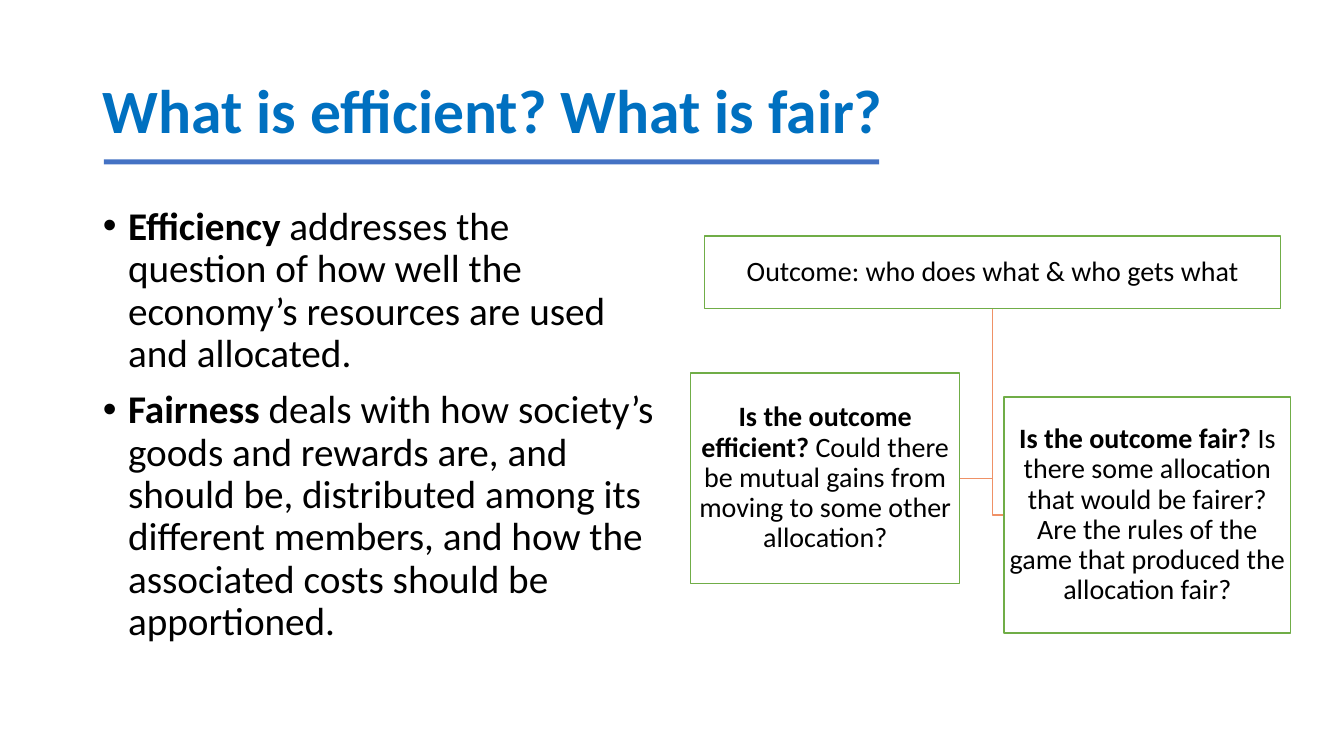
import pptx
import pptx.dml.color
import pptx.enum.shapes
import pptx.enum.text
import pptx.oxml
import pptx.oxml.ns
import pptx.util

Inches = pptx.util.Inches
RGBColor = pptx.dml.color.RGBColor
Align = pptx.enum.text.PP_ALIGN
Anchor = pptx.enum.text.MSO_ANCHOR

TITLE_BLUE = RGBColor(0x00, 0x70, 0xC0)
RULE_BLUE = RGBColor(0x44, 0x72, 0xC4)
BOX_GREEN = RGBColor(0x70, 0xAD, 0x47)
BRANCH_ORANGE = RGBColor(0xEF, 0x91, 0x66)
BLACK = RGBColor(0x00, 0x00, 0x00)
WHITE = RGBColor(0xFF, 0xFF, 0xFF)

DEFINITIONS = [
    ("Efficiency", " addresses the question of how well the economy’s resources "
                   "are used and allocated."),
    ("Fairness", " deals with how society’s goods and rewards are, and should be, "
                 "distributed among its different members, and how the associated "
                 "costs should be apportioned."),
]
OUTCOME = ("", "Outcome: who does what & who gets what")
EFFICIENT = ("Is the outcome efficient? ",
             "Could there be mutual gains from moving to some other allocation?")
FAIR = ("Is the outcome fair? ",
        "Is there some allocation that would be fairer? Are the rules of the game "
        "that produced the allocation fair?")


def write_text(shape, paragraphs, *, size, color=BLACK, align=Align.LEFT,
               anchor=Anchor.TOP, inset=None, space_before=0, bullet=False):
    """Fill a shape with paragraphs, each given as (bold lead, plain rest)."""
    frame = shape.text_frame
    frame.word_wrap = True
    frame.auto_size = pptx.enum.text.MSO_AUTO_SIZE.NONE
    frame.vertical_anchor = anchor
    if inset is not None:
        frame.margin_left = frame.margin_right = Inches(inset)
        frame.margin_top = frame.margin_bottom = Inches(inset)
    for index, parts in enumerate(paragraphs):
        paragraph = frame.add_paragraph() if index else frame.paragraphs[0]
        paragraph.alignment = align
        paragraph.line_spacing = 0.9
        paragraph.space_before = pptx.util.Pt(space_before)
        if bullet:
            add_bullet(paragraph)
        for text, bold in zip(parts, (True, False)):
            if text:
                run = paragraph.add_run()
                run.text = text
                run.font.name = "Calibri"
                run.font.size = pptx.util.Pt(size)
                run.font.bold = bold
                run.font.color.rgb = color


def add_bullet(paragraph):
    properties = paragraph._p.get_or_add_pPr()
    properties.set("marL", str(Inches(0.25)))
    properties.set("indent", str(-Inches(0.25)))
    for tag, name, value in (("a:buFont", "typeface", "Arial"), ("a:buChar", "char", "•")):
        element = pptx.oxml.parse_xml(f"<{tag} {pptx.oxml.ns.nsdecls('a')}/>")
        element.set(name, value)
        properties.append(element)


def place(shape, box):
    shape.left, shape.top, shape.width, shape.height = (Inches(length) for length in box)


def add_rectangle(slide, box, fill, line=None):
    shape = slide.shapes.add_shape(pptx.enum.shapes.MSO_SHAPE.RECTANGLE,
                                   *(Inches(length) for length in box))
    shape.shadow.inherit = False
    shape.fill.solid()
    shape.fill.fore_color.rgb = fill
    if line is None:
        shape.line.fill.background()
    else:
        shape.line.color.rgb = line
        shape.line.width = pptx.util.Pt(1)
    return shape


def add_title(slide, box):
    title = slide.shapes.title
    place(title, box)
    write_text(title, [("What is efficient? What is fair?", "")], size=44,
               color=TITLE_BLUE, anchor=Anchor.MIDDLE)
    # Rule under the title
    left, top, _, _ = box
    add_rectangle(slide, (left + 0.11, top + 1.18, 7.69, 0.05), RULE_BLUE)


def add_definitions(slide, box):
    body = slide.placeholders[1]
    place(body, box)
    write_text(body, DEFINITIONS, size=28, space_before=10, bullet=True)


def add_branch(slide, start, end):
    """Line going down from start, then sideways to end."""
    (start_x, start_y), (end_x, end_y) = start, end
    builder = slide.shapes.build_freeform(Inches(start_x), Inches(start_y))
    builder.add_line_segments([(Inches(start_x), Inches(end_y)),
                               (Inches(end_x), Inches(end_y))], close=False)
    branch = builder.convert_to_shape()
    branch.shadow.inherit = False
    branch.fill.background()
    branch.line.color.rgb = BRANCH_ORANGE
    branch.line.width = pptx.util.Pt(1)


def add_outcome_tree(slide, box):
    left, top, width, height = box
    outcome_box = (left + 0.14, top, 5.71, 0.72)
    efficient_box = (left, top + 1.36, 2.67, 2.09)
    fair_box = (left + width - 2.84, top + height - 2.34, 2.84, 2.34)

    # Branches from the outcome to the near side of each question
    trunk = (outcome_box[0] + outcome_box[2] / 2, top + outcome_box[3])
    add_branch(slide, trunk, (fair_box[0], fair_box[1] + fair_box[3] / 2))
    add_branch(slide, trunk, (efficient_box[0] + efficient_box[2],
                              efficient_box[1] + efficient_box[3] / 2))

    # Boxes
    for node_box, parts in ((outcome_box, OUTCOME), (efficient_box, EFFICIENT),
                            (fair_box, FAIR)):
        node = add_rectangle(slide, node_box, WHITE, BOX_GREEN)
        write_text(node, [parts], size=20, align=Align.CENTER,
                   anchor=Anchor.MIDDLE, inset=0.01)


def main():
    presentation = pptx.Presentation()
    presentation.slide_width = Inches(13.33)
    presentation.slide_height = Inches(7.5)
    slide = presentation.slides.add_slide(presentation.slide_layouts[1])
    add_title(slide, (0.92, 0.4, 11.5, 1.45))
    add_definitions(slide, (0.92, 2, 5.67, 4.76))
    add_outcome_tree(slide, (6.85, 2.34, 5.95, 3.94))
    presentation.save("out.pptx")


if __name__ == "__main__":
    main()
